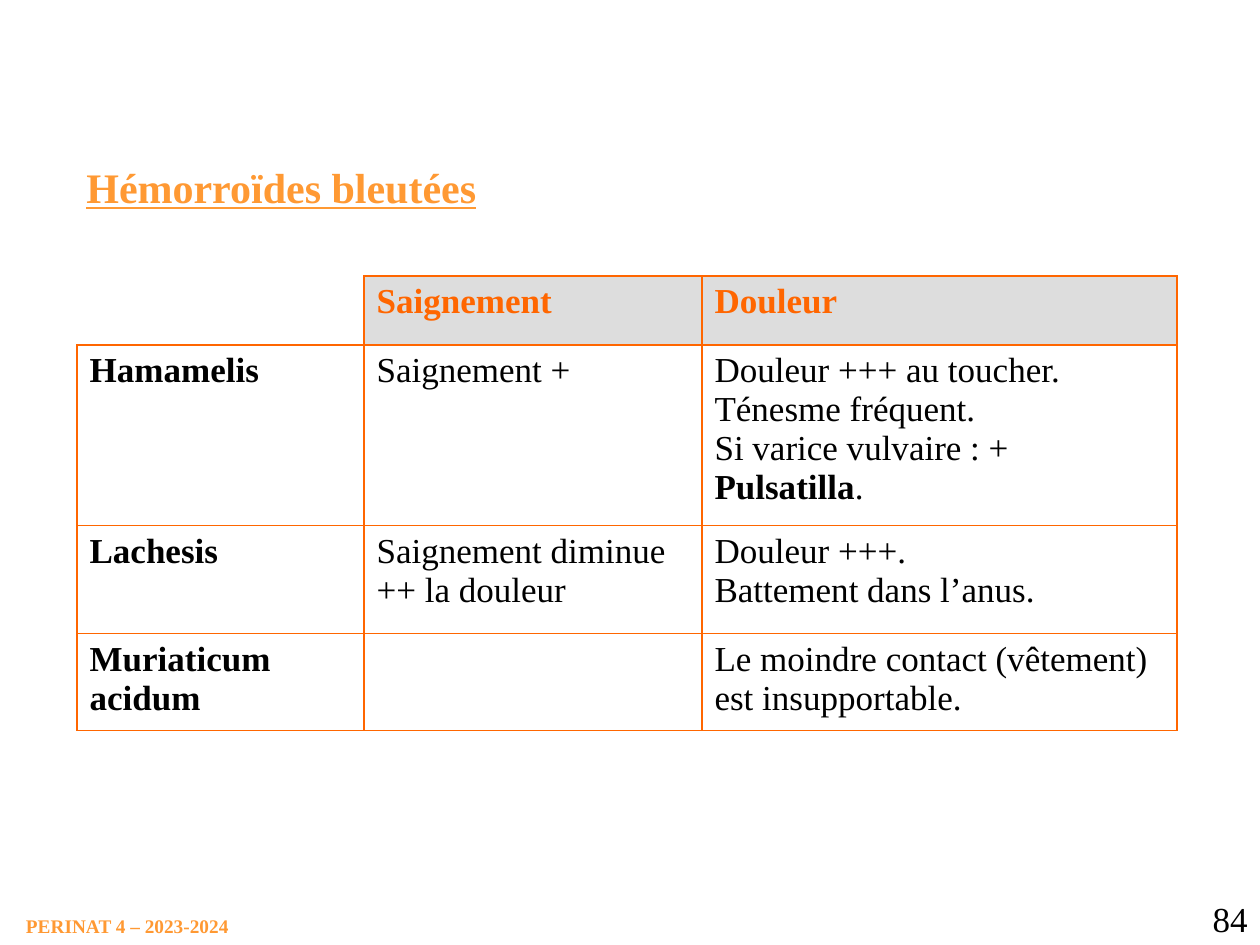
from dataclasses import dataclass
from typing import NamedTuple

from lxml import etree
from pptx import Presentation
from pptx import util as u
from pptx.dml.color import RGBColor
from pptx.enum import text
from pptx.oxml.ns import qn

PX_PER_INCH = 126


@dataclass(frozen=True)
class Theme:
    font: str = "Times New Roman"
    accent: str = "FF9933"
    rule: str = "FF6600"
    header_fill: str = "DDDDDD"
    ink: str = "000000"
    title_size: int = 24
    body_size: int = 20
    footer_size: int = 11
    rule_width: int = 1


class Label(NamedTuple):
    wording: str
    left: int
    top: int
    width: int
    height: int
    size: int
    color: str
    bold: bool = False
    underline: bool = False
    wrap: bool = False
    margin: bool = True
    align: text.PP_ALIGN = text.PP_ALIGN.LEFT


class Span(NamedTuple):
    wording: str
    bold: bool = False


class Remedy(NamedTuple):
    name: str
    bleeding: str
    pain: list[list[Span]]
    height: int


THEME = Theme()

LABELS = [
    Label("PERINAT 4 – 2023-2024", 26, 914, 207, 24, THEME.footer_size,
          THEME.accent, bold=True, margin=False),
    Label("84", 1155, 891, 105, 54, THEME.body_size, THEME.ink,
          wrap=True, align=text.PP_ALIGN.RIGHT),
    Label("Hémorroïdes bleutées", 74, 155, 416, 63, THEME.title_size,
          THEME.accent, bold=True, underline=True),
]

HEADINGS = ["", "Saignement", "Douleur"]
HEADING_HEIGHT = 69
COLUMN_WIDTHS = [287, 338, 475]
TABLE_LEFT, TABLE_TOP = 77, 276

REMEDIES = [
    Remedy("Hamamelis", "Saignement +", [
        [Span("Douleur +++ au toucher.")],
        [Span("Ténesme fréquent.")],
        [Span("Si varice vulvaire : + "), Span("Pulsatilla", True), Span(".")],
    ], 180),
    Remedy("Lachesis", "Saignement diminue ++ la douleur", [
        [Span("Douleur +++.")],
        [Span("Battement dans l’anus.")],
    ], 108),
    Remedy("Muriaticum acidum", "", [
        [Span("Le moindre contact (vêtement)")],
        [Span("est insupportable.")],
    ], 97),
]


def px(length: int) -> int:
    return u.Inches(length / PX_PER_INCH)


def style_font(font, size: int, color: str) -> None:
    font.name = THEME.font
    font.size = u.Pt(size)
    font.color.rgb = RGBColor.from_string(color)


def draw_label(slide, label: Label) -> None:
    box = slide.shapes.add_textbox(
        px(label.left), px(label.top), px(label.width), px(label.height))
    frame = box.text_frame
    frame.word_wrap = label.wrap
    if not label.margin:
        frame.margin_left = frame.margin_right = 0
        frame.margin_top = frame.margin_bottom = 0
    line = frame.paragraphs[0]
    line.text = label.wording
    line.alignment = label.align
    style_font(line.font, label.size, label.color)
    line.font.bold = label.bold
    line.font.underline = label.underline


def rule_cell(cell, sides: str) -> None:
    properties = cell._tc.get_or_add_tcPr()
    for position, side in enumerate("LRTB"):
        edge = etree.Element(qn(f"a:ln{side}"), w=str(u.Pt(THEME.rule_width)))
        if side in sides:
            paint = etree.SubElement(edge, qn("a:solidFill"))
            etree.SubElement(paint, qn("a:srgbClr"), val=THEME.rule)
        else:
            etree.SubElement(edge, qn("a:noFill"))
        properties.insert(position, edge)


def fill_cell(cell, lines: list[list[Span]], color: str,
              background: str = "", sides: str = "LRTB") -> None:
    if background:
        cell.fill.solid()
        cell.fill.fore_color.rgb = RGBColor.from_string(background)
    else:
        cell.fill.background()
    rule_cell(cell, sides)
    frame = cell.text_frame
    for index, spans in enumerate(lines):
        line = frame.add_paragraph() if index else frame.paragraphs[0]
        style_font(line.font, THEME.body_size, color)
        for span in spans:
            run = line.add_run()
            run.text = span.wording
            run.font.bold = span.bold


def one_line(wording: str, bold: bool = False) -> list[list[Span]]:
    return [[Span(wording, bold)] if wording else []]


def draw_remedies(slide) -> None:
    heights = [HEADING_HEIGHT] + [remedy.height for remedy in REMEDIES]
    table = slide.shapes.add_table(
        len(heights), len(COLUMN_WIDTHS), px(TABLE_LEFT), px(TABLE_TOP),
        px(sum(COLUMN_WIDTHS)), px(sum(heights))).table
    table.first_row = table.horz_banding = False
    for column, width in zip(table.columns, COLUMN_WIDTHS):
        column.width = px(width)
    for row, height in zip(table.rows, heights):
        row.height = px(height)
    for column, heading in enumerate(HEADINGS):
        fill_cell(table.cell(0, column), one_line(heading, True), THEME.rule,
                  THEME.header_fill if heading else "",
                  "LRTB" if heading else "RB")
    for row, remedy in enumerate(REMEDIES, start=1):
        contents = [one_line(remedy.name, True), one_line(remedy.bleeding), remedy.pain]
        for column, lines in enumerate(contents):
            fill_cell(table.cell(row, column), lines, THEME.ink)


def main() -> None:
    deck = Presentation()
    deck.slide_width, deck.slide_height = px(1260), px(945)
    slide = deck.slides.add_slide(deck.slide_layouts[6])
    for label in LABELS:
        draw_label(slide, label)
    draw_remedies(slide)
    deck.save("out.pptx")


if __name__ == "__main__":
    main()
